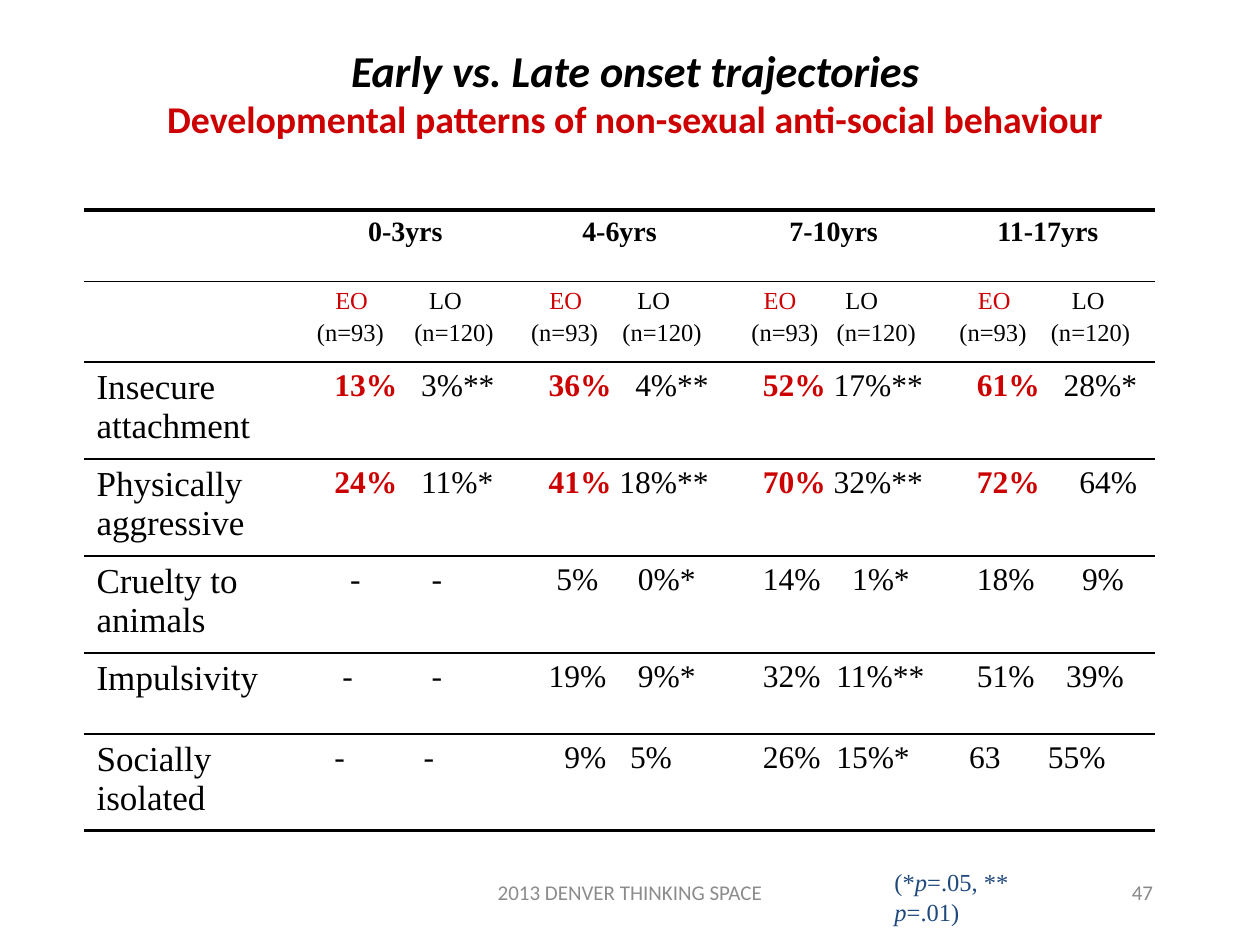
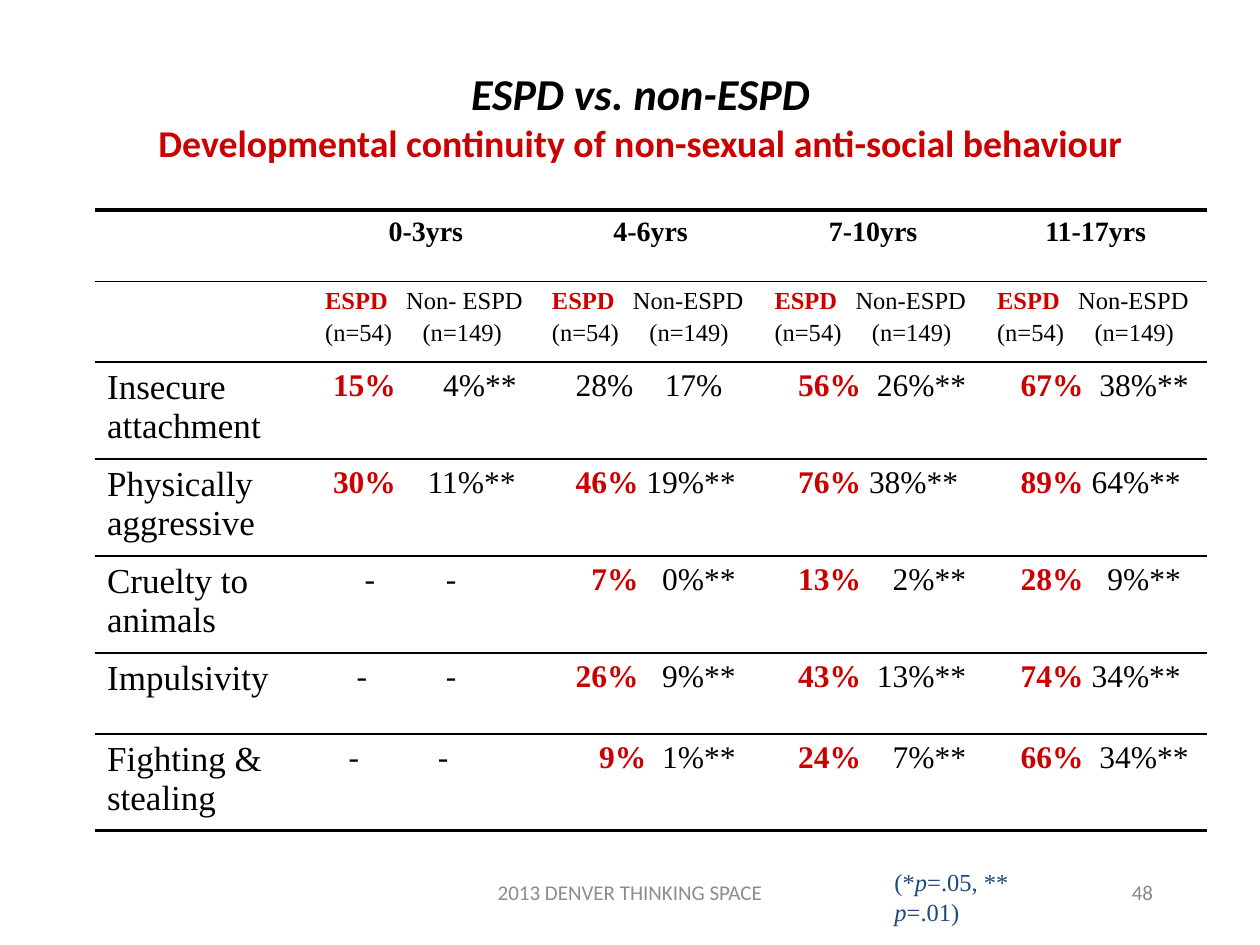
"""Build two comparison slides on developmental patterns by age group."""
from dataclasses import dataclass

from lxml import etree
from pptx import Presentation
from pptx.dml.color import RGBColor
from pptx.enum.text import MSO_ANCHOR, MSO_AUTO_SIZE, PP_ALIGN
from pptx.oxml.ns import qn
from pptx.util import Pt

LEFT, CENTER, RIGHT = PP_ALIGN.LEFT, PP_ALIGN.CENTER, PP_ALIGN.RIGHT
TOP, MIDDLE = MSO_ANCHOR.TOP, MSO_ANCHOR.MIDDLE
NO_AUTOFIT = MSO_AUTO_SIZE.NONE
TITLE_ONLY_LAYOUT = 5
PLAIN_TABLE_STYLE = "{2D5ABB26-0587-4C30-8999-92F81FD0307C}"


@dataclass(frozen=True)
class Theme:
    """Colours, fonts, type sizes and line widths."""
    black: str = "000000"
    red: str = "CC0000"
    navy: str = "1F497D"
    footer_gray: str = "8C8C8C"
    number_gray: str = "898989"
    sans: str = "Calibri"
    serif: str = "Times New Roman"
    title: float = 25.2
    subtitle: float = 21.6
    label: float = 20
    value: float = 18
    age: float = 16
    group: float = 14
    footer: float = 12
    thin: float = 1
    thick: float = 2.25


THEME = Theme()
AGES = ["0-3yrs", "4-6yrs", "7-10yrs", "11-17yrs"]
ROW_HEIGHTS = [40.8, 46.2, 55.4, 55.4, 55.4, 46.2, 55.4]
TABLE_TOP = 120


@dataclass(frozen=True)
class Pair:
    """Two entries of one line, each with its tab position."""
    first: str
    second: str
    start: float
    stop: float
    red: bool = False
    bold: bool = False


@dataclass(frozen=True)
class Span:
    """A run of text and its look."""
    text: str
    color: str = THEME.black
    bold: bool = False
    italic: bool = False
    size: float | None = None


@dataclass(frozen=True)
class Comparison:
    """The content and geometry of one slide."""
    number: int
    title: str
    subtitle: str
    title_width: float
    title_bottom_inset: float
    table_left: float
    columns: list[float]
    groups: list[list[Pair]]
    rows: dict[str, list[Pair]]


def strong(first: str, second: str, start: float, stop: float) -> Pair:
    """Return a pair whose first entry is red and bold."""
    return Pair(first, second, start, stop, True, True)


ONSET = Comparison(
    47, "Early vs. Late onset trajectories",
    "Developmental patterns of non-sexual anti-social behaviour",
    642, 30, 48, [122.4] * 5,
    [[Pair("EO", "LO", 14, group_stop, True),
      Pair("(n=93)", "(n=120)", count_start, count_stop)]
     for group_stop, count_start, count_stop in [
         (67.7, 3.5, 59.2), (64.2, 3.5, 55.7),
         (60.7, 7, 55.7), (67.7, 3.5, 55.7)]],
    {
        "Insecure attachment": [
            strong("13%", "3%**", 13.5, 63), strong("36%", "4%**", 13.5, 63),
            strong("52%", "17%**", 13.5, 54), strong("61%", "28%*", 13.5, 63)],
        "Physically aggressive": [
            strong("24%", "11%*", 13.5, 63), strong("41%", "18%**", 13.5, 54),
            strong("70%", "32%**", 13.5, 54), strong("72%", "64%", 13.5, 72)],
        "Cruelty to animals": [
            Pair("-", "-", 22.5, 69), Pair("5%", "0%*", 18, 64.5),
            Pair("14%", "1%*", 13.5, 64.5), Pair("18%", "9%", 13.5, 73.5)],
        "Impulsivity": [
            Pair("-", "-", 18, 69), Pair("19%", "9%*", 13.5, 64.5),
            Pair("32%", "11%**", 13.5, 55.5), Pair("51%", "39%", 13.5, 64.5)],
        "Socially isolated": [
            Pair("-", "-", 13.5, 64.5), Pair("9%", "5%", 22.5, 60),
            Pair("26%", "15%*", 13.5, 55.5), Pair("63", "55%", 9, 54)],
    })

ESPD = Comparison(
    48, "ESPD vs. non-ESPD",
    "Developmental continuity of non-sexual anti-social behaviour",
    648, 3.6, 54, [124.6, 129.6, 127.2, 127.2, 127.2],
    [[strong("ESPD", other, 0, 46.3), Pair("(n=54)", "(n=149)", 0, 55.7)]
     for other in ["Non- ESPD"] + ["Non-ESPD"] * 3],
    {
        "Insecure attachment": [
            strong("15%", "4%**", 4.5, 67.5), Pair("28%", "17%", 13.5, 64.5),
            strong("56%", "26%**", 13.5, 58.5), strong("67%", "38%**", 13.5, 58.5)],
        "Physically aggressive": [
            strong("30%", "11%**", 4.5, 58.5), strong("46%", "19%**", 13.5, 54),
            strong("76%", "38%**", 13.5, 54), strong("89%", "64%**", 13.5, 54)],
        "Cruelty to animals": [
            Pair("-", "-", 22.5, 69), strong("7%", "0%**", 22.5, 63),
            strong("13%", "2%**", 13.5, 67.5), strong("28%", "9%**", 13.5, 63)],
        "Impulsivity": [
            Pair("-", "-", 18, 69), strong("26%", "9%**", 13.5, 63),
            strong("43%", "13%**", 13.5, 58.5), strong("74%", "34%**", 13.5, 54)],
        "Fighting & stealing": [
            Pair("-", "-", 13.5, 64.5), strong("9%", "1%**", 27, 63),
            strong("24%", "7%**", 13.5, 67.5), strong("66%", "34%**", 13.5, 58.5)],
    })


def write(para, spans: list[Span], font: str, size: float, align=LEFT) -> None:
    """Fill a paragraph with formatted spans."""
    para.alignment = align
    para.font.name, para.font.size = font, Pt(size)
    for span in spans:
        run = para.add_run()
        run.text = span.text
        run.font.bold, run.font.italic = span.bold, span.italic
        run.font.color.rgb = RGBColor.from_string(span.color)
        if span.size:
            run.font.size = Pt(span.size)


def write_pair(para, pair: Pair, size: float) -> None:
    """Write two entries aligned on tab stops."""
    lead = "\t" if pair.start else ""
    color = THEME.red if pair.red else THEME.black
    write(para, [Span(lead + pair.first, color, pair.bold),
                 Span("\t" + pair.second)], THEME.serif, size)
    tabs = etree.Element(qn("a:tabLst"))
    for position in filter(None, (pair.start, pair.stop)):
        etree.SubElement(tabs, qn("a:tab"), pos=str(Pt(position)), algn="l")
    para.font._element.addprevious(tabs)


def rule_cell(cell, top: float, bottom: float) -> None:
    """Give a cell horizontal rules and no fill."""
    properties = cell._tc.get_or_add_tcPr()
    for tag, width in (("a:lnT", top), ("a:lnB", bottom)):
        line = etree.SubElement(properties, qn(tag), w=str(Pt(width)))
        fill = etree.SubElement(line, qn("a:solidFill"))
        etree.SubElement(fill, qn("a:srgbClr"), val=THEME.black)
    cell.fill.background()


def add_title(page, content: Comparison) -> None:
    """Place the two-line title in its placeholder."""
    box = page.shapes.title
    box.left, box.top = Pt(42), Pt(36)
    box.width, box.height = Pt(content.title_width), Pt(60)
    frame = box.text_frame
    frame.auto_size, frame.word_wrap = NO_AUTOFIT, True
    frame.vertical_anchor = MIDDLE
    frame.margin_bottom = Pt(content.title_bottom_inset)
    para = frame.paragraphs[0]
    write(para, [Span(content.title, bold=True, italic=True, size=THEME.title)],
          THEME.sans, THEME.title, CENTER)
    para.add_line_break()
    write(para, [Span(content.subtitle, THEME.red, True, size=THEME.subtitle)],
          THEME.sans, THEME.title, CENTER)


def add_comparison_table(page, content: Comparison) -> None:
    """Draw the table of paired percentages by age."""
    table = page.shapes.add_table(
        len(ROW_HEIGHTS), len(content.columns), Pt(content.table_left), Pt(TABLE_TOP),
        Pt(sum(content.columns)), Pt(sum(ROW_HEIGHTS))).table
    table.first_row = table.horz_banding = False
    table._tbl.tblPr.find(qn("a:tableStyleId")).text = PLAIN_TABLE_STYLE
    for column, width in zip(table.columns, content.columns):
        column.width = Pt(width)
    last = len(ROW_HEIGHTS) - 1
    for index, height in enumerate(ROW_HEIGHTS):
        table.rows[index].height = Pt(height)
        for cell in table.rows[index].cells:
            rule_cell(cell, THEME.thin if index else THEME.thick,
                      THEME.thick if index == last else THEME.thin)
    for column, (age, (group, count)) in enumerate(zip(AGES, content.groups), 1):
        write(table.cell(0, column).text_frame.paragraphs[0],
              [Span(age, bold=True)], THEME.serif, THEME.age, CENTER)
        frame = table.cell(1, column).text_frame
        write_pair(frame.paragraphs[0], group, THEME.group)
        para = frame.add_paragraph()
        para.space_before = Pt(0.2 * THEME.group)
        write_pair(para, count, THEME.group)
    for row, (label, pairs) in enumerate(content.rows.items(), 2):
        write(table.cell(row, 0).text_frame.paragraphs[0], [Span(label)],
              THEME.serif, THEME.label)
        for column, pair in enumerate(pairs, 1):
            write_pair(table.cell(row, column).text_frame.paragraphs[0],
                       pair, THEME.value)


def add_text(page, frame_at: tuple[float, float, float, float], spans: list[Span],
             font: str, size: float, align=LEFT, anchor=TOP, wrap: bool = True) -> None:
    """Add a one-paragraph text box."""
    frame = page.shapes.add_textbox(*map(Pt, frame_at)).text_frame
    frame.word_wrap, frame.vertical_anchor = wrap, anchor
    write(frame.paragraphs[0], spans, font, size, align)


def add_footer(page, number: int) -> None:
    """Add the event name, page number and significance key."""
    add_text(page, (246, 492, 228, 36),
             [Span("2013 DENVER THINKING SPACE", THEME.footer_gray)],
             THEME.sans, THEME.footer, CENTER, MIDDLE)
    add_text(page, (516, 492, 150, 36), [Span(str(number), THEME.number_gray)],
             THEME.sans, THEME.footer, RIGHT, MIDDLE)
    key = [Span(text, THEME.navy, italic=text == "p")
           for text in ("(*", "p", "=.05, ** ", "p", "=.01)")]
    add_text(page, (504, 492, 120, 24), key, THEME.serif, THEME.group, wrap=False)


def main() -> None:
    """Build and save the deck."""
    deck = Presentation()
    deck.slide_width, deck.slide_height = Pt(720), Pt(540)
    for content in (ONSET, ESPD):
        page = deck.slides.add_slide(deck.slide_layouts[TITLE_ONLY_LAYOUT])
        add_title(page, content)
        add_comparison_table(page, content)
        add_footer(page, content.number)
    deck.save("out.pptx")


if __name__ == "__main__":
    main()
